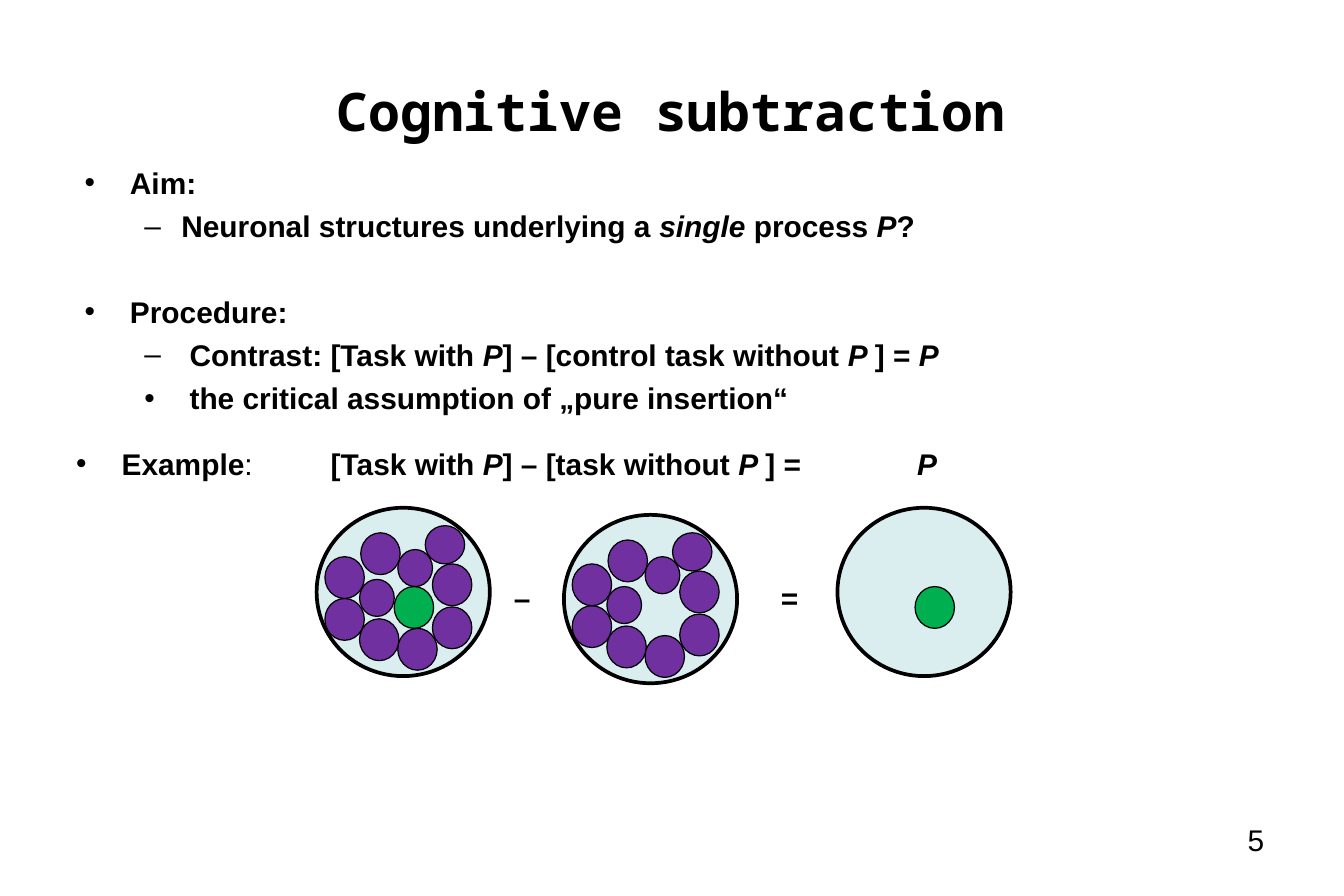
from pptx import Presentation
from pptx.dml.color import RGBColor
from pptx.enum import shapes, text
from pptx.oxml import parse_xml
from pptx.oxml.ns import nsdecls
from pptx.util import Inches, Pt

COLORS = {"ink": "000000", "paper": "FFFFFF", "circle": "DAEDEF",
          "process": "00B050", "other": "7030A0"}
ALIGN = text.PP_ALIGN
CIRCLE_SIZE = (1.45, 1.41)
LARGE, SMALL, FLAT = (0.33, 0.35), (0.29, 0.31), (0.33, 0.32)
# Offsets from the circle's corner, with the size of each cell
OTHER_CELLS = [
    (0.07, 0.76, LARGE), (0.36, 0.93, LARGE), (0.68, 1.01, LARGE),
    (0.97, 0.83, LARGE), (0.97, 0.47, LARGE), (0.07, 0.41, LARGE),
    (0.37, 0.21, LARGE), (0.68, 0.35, SMALL), (0.91, 0.15, FLAT),
    (0.36, 0.6, SMALL),
]
PROCESS_CELL = (0.65, 0.66, LARGE)
BODY = [  # text, level, bullet, space before
    ("Aim:", 0, "•", 0),
    ("Neuronal structures underlying a *single *process *P*?", 1, "–", 4.5),
    ("Procedure:", 0, "•", 29.7),
    (" Contrast: [Task with *P*] – [control task without *P *] = *P*", 1, "–", 4.5),
    (" the critical assumption of „pure insertion“", 1, "•", 4.5),
]
INDENTS = [(0.38, -0.38), (0.81, -0.31)]


def rgb(name):
    return RGBColor.from_string(COLORS[name])


def add_runs(p, words, size=18, font="Arial", bold=True):
    """Add words to a paragraph; parts between asterisks are italic."""
    for i, part in enumerate(words.split("*")):
        if part:
            r = p.add_run()
            r.text = part
            r.font.size, r.font.name = Pt(size), font
            r.font.bold, r.font.italic = bold, i % 2 == 1
            r.font.color.rgb = rgb("ink")


def set_bullet(p, char, level):
    margin, indent = INDENTS[level]
    p.level = level
    pPr = p._p.get_or_add_pPr()
    pPr.set("marL", str(Inches(margin)))
    pPr.set("indent", str(Inches(indent)))
    pPr.append(parse_xml(f'<a:buFont {nsdecls("a")} typeface="Arial"/>'))
    pPr.append(parse_xml(f'<a:buChar {nsdecls("a")} char="{char}"/>'))


def add_box(slide, x, y, w, h):
    s = slide.shapes.add_textbox(*map(Inches, (x, y, w, h)))
    s.text_frame.word_wrap = True
    return s


def add_label(slide, words, x, y, w, h=0.4, align=ALIGN.LEFT, **fmt):
    p = add_box(slide, x, y, w, h).text_frame.paragraphs[0]
    p.alignment = align
    add_runs(p, words, **fmt)
    return p


def add_title(slide, x, y, w, h):
    s = slide.shapes.title
    s.left, s.top, s.width, s.height = map(Inches, (x, y, w, h))
    tf = s.text_frame
    tf.vertical_anchor = text.MSO_ANCHOR.MIDDLE
    p = tf.paragraphs[0]
    p.alignment = ALIGN.CENTER
    add_runs(p, "Cognitive subtraction", size=32, font="Noto Sans Mono")


def add_body(slide, x, y, w, h):
    s = add_box(slide, x, y, w, h)
    s.fill.solid()
    s.fill.fore_color.rgb = rgb("paper")
    tf = s.text_frame
    for i, (words, level, bullet, before) in enumerate(BODY):
        p = tf.add_paragraph() if i else tf.paragraphs[0]
        p.space_before = Pt(before)
        set_bullet(p, bullet, level)
        add_runs(p, words)


def add_ellipse(slide, x, y, size, color, line=0.75):
    s = slide.shapes.add_shape(shapes.MSO_SHAPE.OVAL,
                               *map(Inches, (x, y, *size)))
    s.shadow.inherit = False
    s.fill.solid()
    s.fill.fore_color.rgb = rgb(color)
    s.line.color.rgb = rgb("ink")
    s.line.width = Pt(line)


def add_brain_circle(slide, x, y, others=False, process=False):
    add_ellipse(slide, x, y, CIRCLE_SIZE, "circle", line=2.25)
    cells = [(*c, "other") for c in OTHER_CELLS] if others else []
    if process:
        cells.append((*PROCESS_CELL, "process"))
    for dx, dy, size, color in cells:
        add_ellipse(slide, x + dx, y + dy, size, color)


def add_example(slide, x, y):
    p = add_label(slide, "Example", x, y, 1.9)
    set_bullet(p, "•", 0)
    add_runs(p, ":", bold=False)
    add_label(slide, "[Task with *P*] – [task without *P *] =", x + 2.13, y, 4.4)
    for words, dx, dy in [("*P*", 6.97, 0), ("–", 3.58, 1.12), ("=", 5.82, 1.12)]:
        add_label(slide, words, x + dx, y + dy, 0.5, align=ALIGN.CENTER)
    add_brain_circle(slide, x + 2.11, y + 0.57, others=True, process=True)
    add_brain_circle(slide, x + 4.18, y + 0.63, others=True)
    add_brain_circle(slide, x + 6.47, y + 0.57, process=True)


def main():
    prs = Presentation()
    prs.slide_width, prs.slide_height = Inches(11.25), Inches(7.5)
    slide = prs.slides.add_slide(prs.slide_layouts[5])
    add_body(slide, 0.61, 1.33, 10, 5.83)
    add_title(slide, 0.56, 0.3, 10.12, 1.25)
    add_example(slide, 0.54, 3.68)
    add_label(slide, "5", 8.06, 6.83, 2.62, 0.52, align=ALIGN.RIGHT, bold=False)
    prs.save("out.pptx")


if __name__ == "__main__":
    main()
